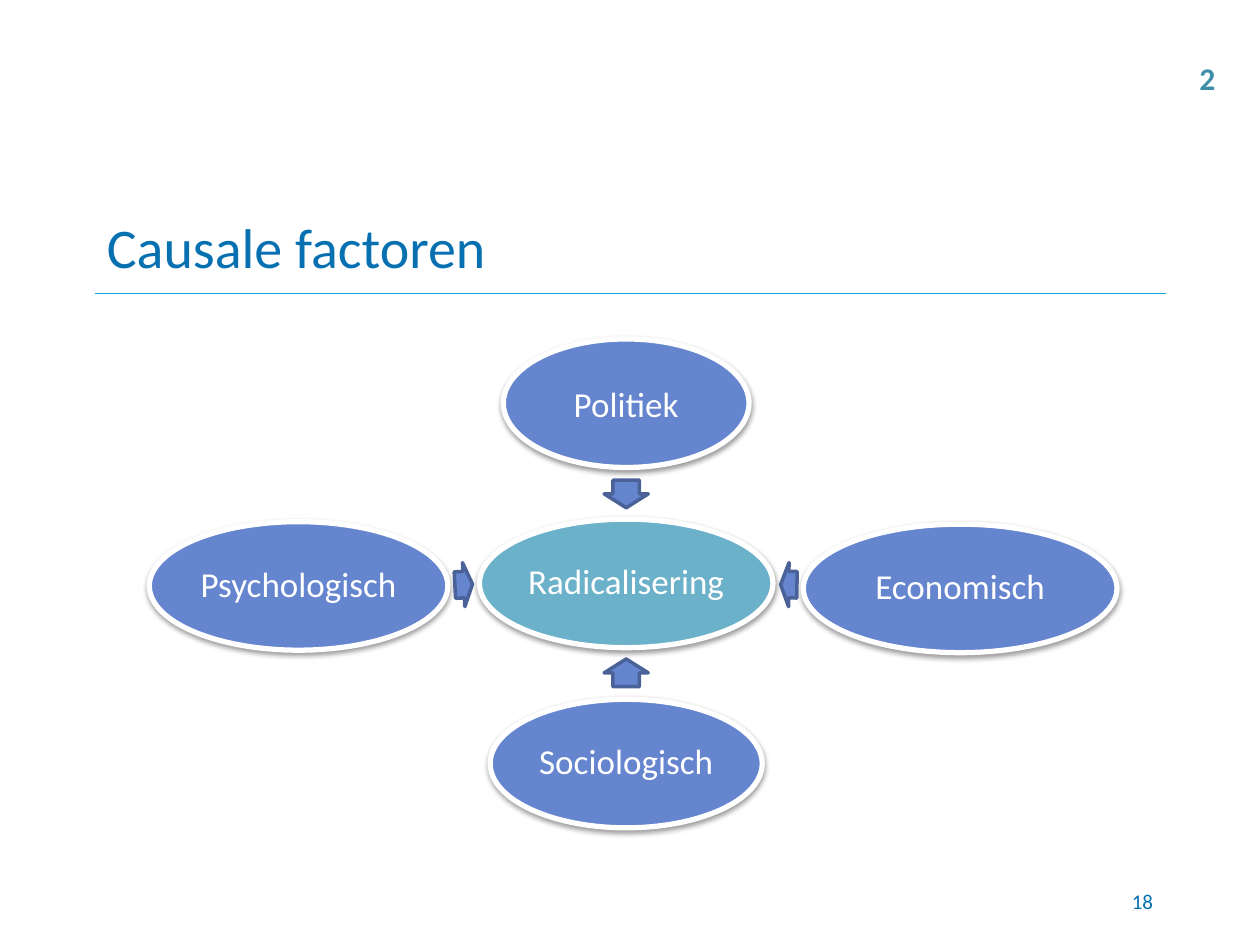
import pptx
import pptx.util
import pptx.dml.color
import pptx.enum.shapes
import pptx.enum.text
import pptx.oxml
import pptx.oxml.ns

Inches, Pt = pptx.util.Inches, pptx.util.Pt
RGBColor = pptx.dml.color.RGBColor
Shape = pptx.enum.shapes.MSO_SHAPE
Align = pptx.enum.text.PP_ALIGN
Anchor = pptx.enum.text.MSO_ANCHOR

TITLE_BLUE = RGBColor(0x07, 0x70, 0xB1)
RULE_BLUE = RGBColor(0x0B, 0xA7, 0xDF)
PAGE_TEAL = RGBColor(0x3E, 0x8E, 0xA9)
CORE_TEAL = RGBColor(0x6B, 0xB1, 0xC9)
FACTOR_BLUE = RGBColor(0x65, 0x85, 0xCF)
ARROW_EDGE = RGBColor(0x4B, 0x62, 0x99)
WHITE = RGBColor(0xFF, 0xFF, 0xFF)

SLIDE_W, SLIDE_H = 10, 7.5
MARGIN = 0.75
RULE_Y = 2.33
CORE_X, CORE_Y = 4.97, 4.63
ROW_STEP = 1.43
OVAL_H = 1.02
ARROW_H = 0.35
ARROW_OFFSET = 0.71

LABELS = [
    ("Causale factoren", (MARGIN, 1.58, SLIDE_W - 2 * MARGIN, 0.75), Align.LEFT, Anchor.MIDDLE, True,
     {"size": Pt(32), "color": TITLE_BLUE, "bold": False}),
    ("18", (7.17, 6.95, 2.08, 0.4), Align.RIGHT, Anchor.MIDDLE, True,
     {"size": Pt(12), "color": TITLE_BLUE, "bold": False}),
    ("2", (9.42, 0.42, 0.33, 0.4), Align.LEFT, Anchor.TOP, False,
     {"size": Pt(18), "color": PAGE_TEAL, "bold": True}),
]
OVALS = [
    ("Radicalisering", CORE_X, CORE_Y, 2.33, CORE_TEAL, 0.9),
    ("Politiek", CORE_X, CORE_Y - ROW_STEP, 1.95, FACTOR_BLUE, 1.0),
    ("Economisch", 7.62, 4.67, 2.49, FACTOR_BLUE, 0.9),
    ("Sociologisch", CORE_X, CORE_Y + ROW_STEP, 2.16, FACTOR_BLUE, 0.9),
    ("Psychologisch", 2.37, 4.65, 2.37, FACTOR_BLUE, 0.9),
]
ARROWS = [
    (CORE_X, CORE_Y - ARROW_OFFSET, 0.22, 90),
    (6.26, 4.64, 0.13, 180.7),
    (CORE_X, CORE_Y + ARROW_OFFSET, 0.22, 270),
    (3.68, 4.64, 0.14, 356.9),
]
SHADOW = (
    '<a:outerShdw %s blurRad="%d" dist="%d" dir="5400000" rotWithShape="0">'
    '<a:srgbClr val="000000"><a:alpha val="38000"/></a:srgbClr></a:outerShdw>'
    % (pptx.oxml.ns.nsdecls("a"), Pt(3.1), Pt(1.6))
)


def write(frame, text, align, anchor, wrap, formats, spacing=1.0):
    frame.word_wrap = wrap
    frame.vertical_anchor = anchor
    paragraph = frame.paragraphs[0]
    paragraph.alignment = align
    paragraph.line_spacing = spacing
    run = paragraph.add_run()
    run.text = text
    run.font.name = "Calibri"
    for key, value in formats.items():
        if key == "color":
            run.font.color.rgb = value
        else:
            setattr(run.font, key, value)


def add_centered(slide, kind, x, y, width, height, fill, edge, edge_width):
    shape = slide.shapes.add_shape(
        kind, Inches(x - width / 2), Inches(y - height / 2), Inches(width), Inches(height))
    shape.shadow.inherit = False
    shape.fill.solid()
    shape.fill.fore_color.rgb = fill
    shape.line.color.rgb = edge
    shape.line.width = Pt(edge_width)
    return shape


def effects(shape):
    return shape._element.spPr.find(pptx.oxml.ns.qn("a:effectLst"))


def main():
    deck = pptx.Presentation()
    deck.slide_width, deck.slide_height = Inches(SLIDE_W), Inches(SLIDE_H)
    slide = deck.slides.add_slide(deck.slide_layouts[6])

    rule = slide.shapes.add_connector(
        pptx.enum.shapes.MSO_CONNECTOR.STRAIGHT,
        Inches(MARGIN), Inches(RULE_Y), Inches(SLIDE_W - MARGIN), Inches(RULE_Y))
    rule.line.color.rgb = RULE_BLUE
    rule.line.width = Pt(0.75)
    rule._element.spPr.append(
        pptx.oxml.parse_xml("<a:effectLst %s/>" % pptx.oxml.ns.nsdecls("a")))

    for text, place, align, anchor, wrap, formats in LABELS:
        label = slide.shapes.add_textbox(*map(Inches, place))
        write(label.text_frame, text, align, anchor, wrap, formats)

    for text, x, y, width, fill, spacing in OVALS:
        oval = add_centered(slide, Shape.OVAL, x, y, width, OVAL_H, fill, WHITE, 3)
        effects(oval).append(pptx.oxml.parse_xml(SHADOW))
        for side in ("left", "top", "right", "bottom"):
            setattr(oval.text_frame, "margin_" + side, Inches(0.03))
        write(oval.text_frame, text, Align.CENTER, Anchor.MIDDLE, False,
              {"size": Pt(20), "color": WHITE}, spacing)

    for x, y, width, turn in ARROWS:
        arrow = add_centered(
            slide, Shape.RIGHT_ARROW, x, y, width, ARROW_H, FACTOR_BLUE, ARROW_EDGE, 2)
        arrow.rotation = turn
        arrow.adjustments[0], arrow.adjustments[1] = 0.6, 0.5

    deck.save("out.pptx")


if __name__ == "__main__":
    main()
